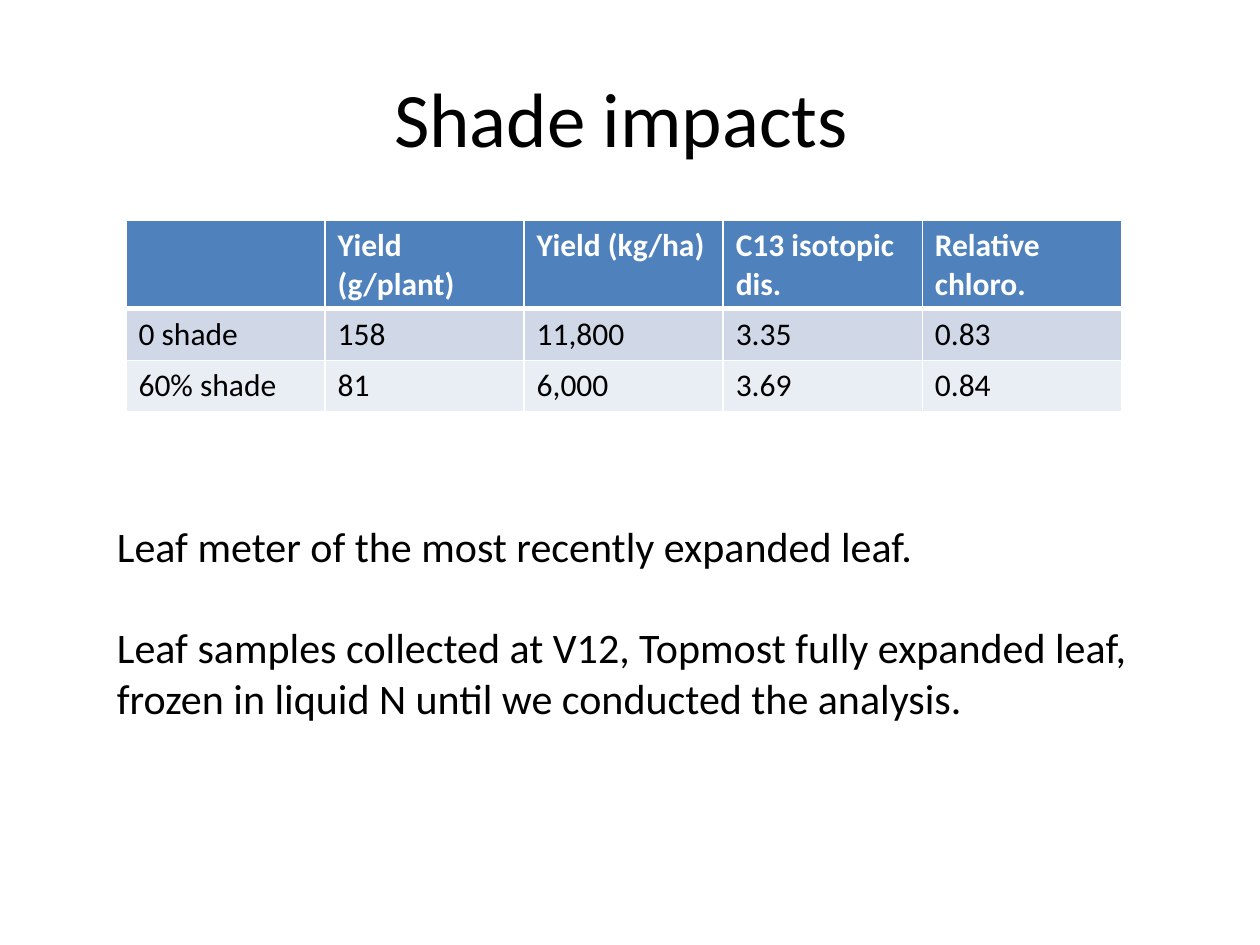
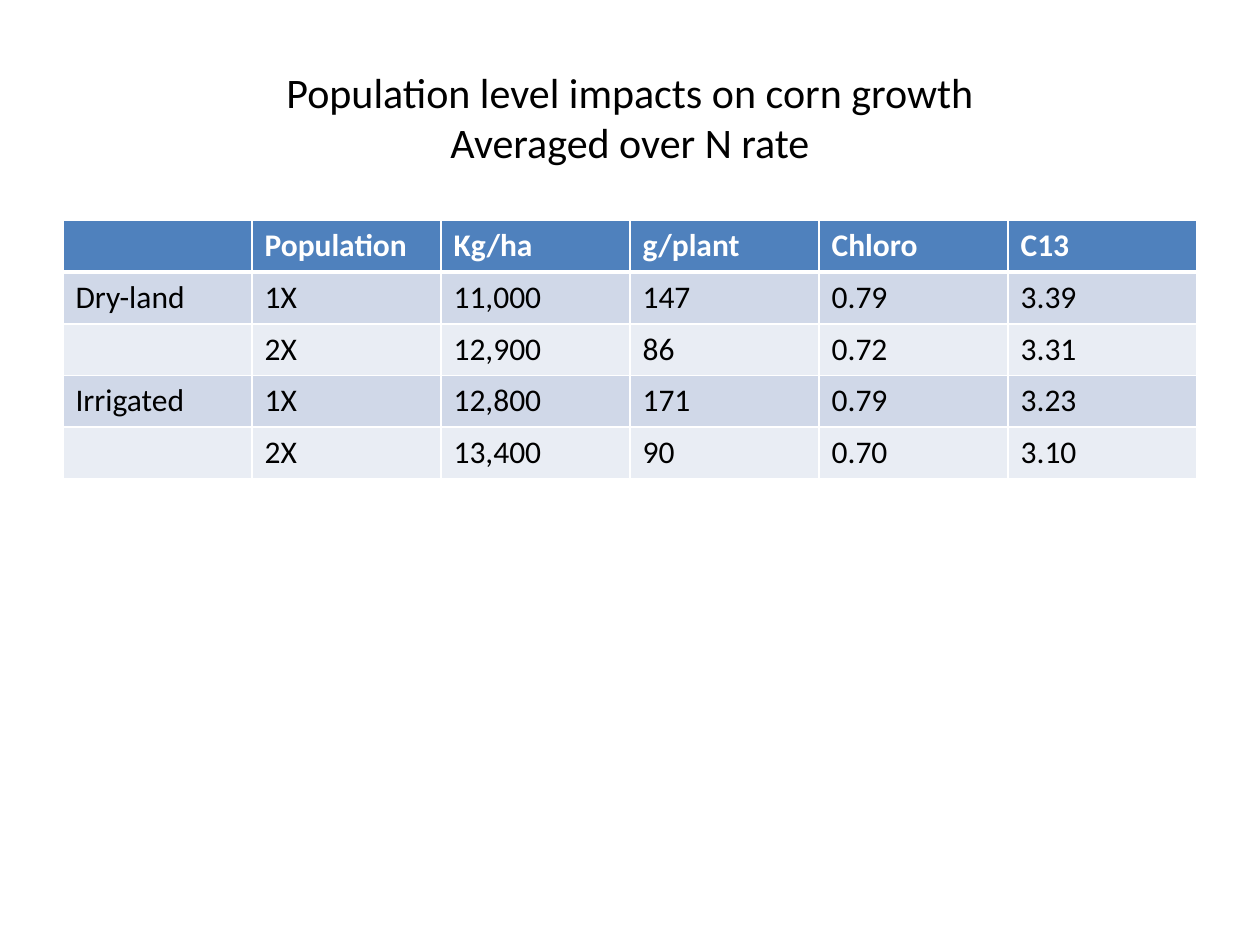
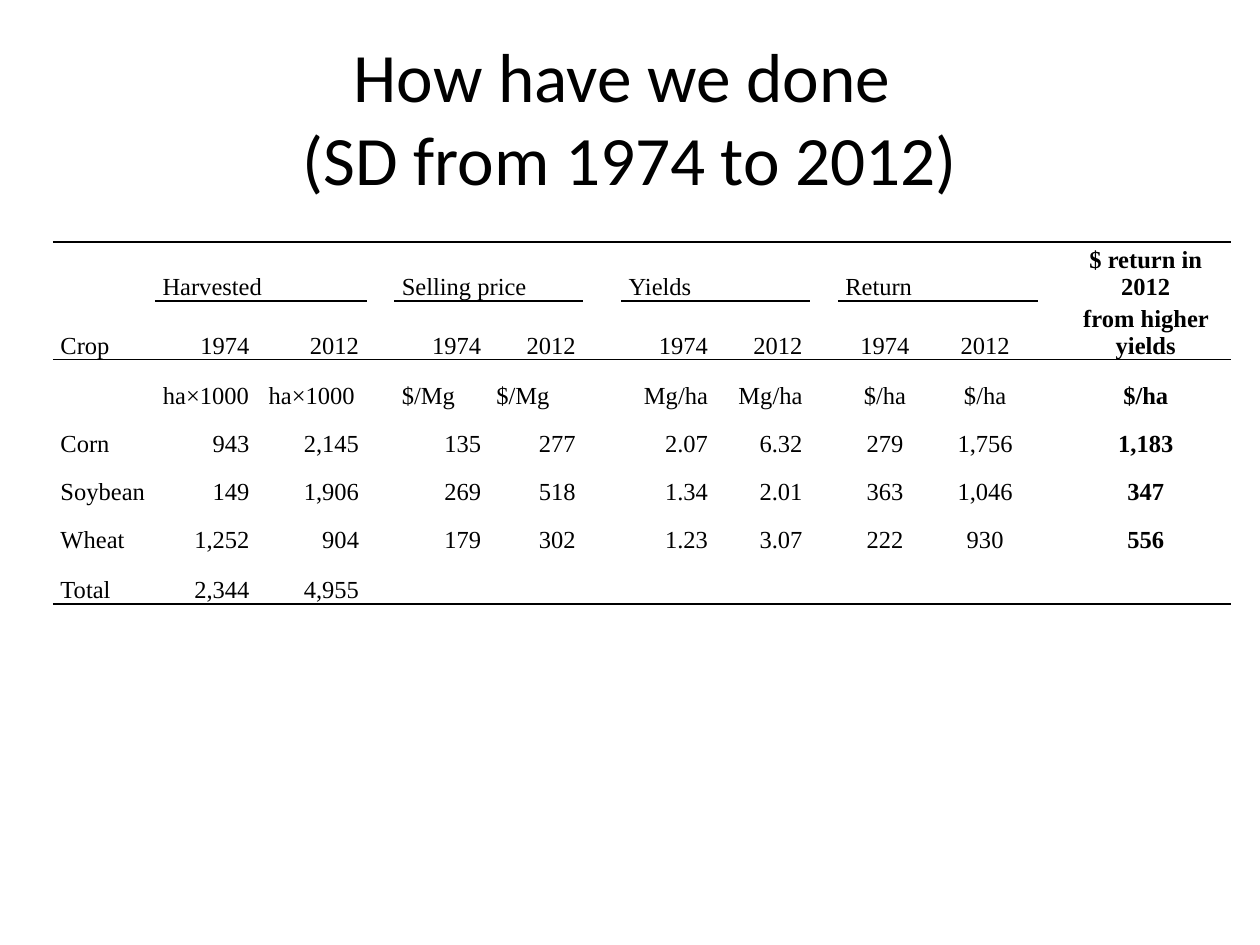
from lxml import etree
from pptx import Presentation
from pptx.dml.color import RGBColor
from pptx.enum.text import MSO_ANCHOR, PP_ALIGN
from pptx.oxml.ns import qn
from pptx.util import Inches, Pt

LEFT, CENTER, RIGHT = PP_ALIGN.LEFT, PP_ALIGN.CENTER, PP_ALIGN.RIGHT
MIDDLE, BOTTOM = MSO_ANCHOR.MIDDLE, MSO_ANCHOR.BOTTOM

COLORS = {
    "text": "000000",
    "white": "FFFFFF",
    "header": "4F81BD",
    "odd_row": "D0D8E8",
    "even_row": "E9EDF4",
}
SANS, SERIF = "Calibri", "Times New Roman"
NO_STYLE_NO_GRID = "{2D5ABB26-0587-4C30-8999-92F81FD0307C}"
SLIDE_W, SLIDE_H = 10, 7.5
MARGIN = 0.05 * SLIDE_W


def style_text(frame, size, face=SANS, color="text", bold=False, align=LEFT):
    for paragraph in frame.paragraphs:
        paragraph.alignment = align
        for run in paragraph.runs:
            run.font.size = Pt(size)
            run.font.name = face
            run.font.bold = bold
            run.font.color.rgb = RGBColor.from_string(COLORS[color])


def draw_borders(cell, color, **widths):
    """Draw the given sides (L, R, T, B) in points and clear the others; call before filling."""
    properties = cell._tc.get_or_add_tcPr()
    for side in "LRTB":
        width = widths.get(side, 0)
        line = etree.SubElement(properties, qn(f"a:ln{side}"), w=str(Pt(width)))
        if width:
            fill = etree.SubElement(line, qn("a:solidFill"))
            etree.SubElement(fill, qn("a:srgbClr"), val=COLORS[color])
        else:
            etree.SubElement(line, qn("a:noFill"))


prs = Presentation()
prs.slide_width, prs.slide_height = Inches(SLIDE_W), Inches(SLIDE_H)

shade_rows = [
    ["", "Yield (g/plant)", "Yield (kg/ha)", "C13 isotopic dis.", "Relative chloro."],
    ["0 shade", "158", "11,800", "3.35", "0.83"],
    ["60% shade", "81", "6,000", "3.69", "0.84"],
]
population_rows = [
    ["", "Population", "Kg/ha", "g/plant", "Chloro", "C13"],
    ["Dry-land", "1X", "11,000", "147", "0.79", "3.39"],
    ["", "2X", "12,900", "86", "0.72", "3.31"],
    ["Irrigated", "1X", "12,800", "171", "0.79", "3.23"],
    ["", "2X", "13,400", "90", "0.70", "3.10"],
]
history_rows = [
    ["", "Harvested", "", "", "Selling price", "", "", "Yields", "", "",
     "Return", "", "", "$ return in 2012"],
    ["Crop", "1974", "2012", "", "1974", "2012", "", "1974", "2012", "",
     "1974", "2012", "", "from higher yields"],
    ["", "ha×1000", "ha×1000", "", "$/Mg", "$/Mg", "", "Mg/ha", "Mg/ha", "",
     "$/ha", "$/ha", "", "$/ha"],
    ["Corn", "943", "2,145", "", "135", "277", "", "2.07", "6.32", "",
     "279", "1,756", "", "1,183"],
    ["Soybean", "149", "1,906", "", "269", "518", "", "1.34", "2.01", "",
     "363", "1,046", "", "347"],
    ["Wheat", "1,252", "904", "", "179", "302", "", "1.23", "3.07", "",
     "222", "930", "", "556"],
    ["Total", "2,344", "4,955"] + [""] * 11,
]
history_widths = [0.81, 0.81, 0.87, 0.22, 0.75, 0.75, 0.3,
                  0.75, 0.75, 0.22, 0.75, 0.84, 0.18, 1.35]
history_heights = [0.33, 0.4, 0.4, 0.38, 0.38, 0.38, 0.4]

# Title, title size, table rows, table left and top, column widths, row heights
pages = [
    ("Shade impacts ", 44, shade_rows, 2 * MARGIN, 1.75, [1.58] * 5, [0.41] * 3),
    ("Population level impacts on corn growth\nAveraged over N rate", 24,
     population_rows, MARGIN, 1.75, [1.5] * 6, [0.41] * 5),
    ("How have we done \n(SD from 1974 to 2012)", 39.6,
     history_rows, 0.42, 1.92, history_widths, history_heights),
]

# Titles and table contents
slides, tables = [], []
for title, title_size, rows, left, top, widths, heights in pages:
    slide = prs.slides.add_slide(prs.slide_layouts[6])
    heading = slide.shapes.add_textbox(
        Inches(MARGIN), Inches(0.04 * SLIDE_H),
        Inches(SLIDE_W - 2 * MARGIN), Inches(SLIDE_H / 6)).text_frame
    heading.word_wrap = True
    heading.vertical_anchor = MIDDLE
    heading.paragraphs[0].text = title
    style_text(heading, title_size, align=CENTER)

    table = slide.shapes.add_table(
        len(rows), len(widths), Inches(left), Inches(top),
        Inches(sum(widths)), Inches(sum(heights))).table
    table._tbl.tblPr.find(qn("a:tableStyleId")).text = NO_STYLE_NO_GRID
    table.horz_banding = False
    for column, width in zip(table.columns, widths):
        column.width = Inches(width)
    for row, height, values in zip(table.rows, heights, rows):
        row.height = Inches(height)
        for cell, value in zip(row.cells, values):
            cell.text_frame.text = value
    slides.append(slide)
    tables.append(table)

shade_slide = slides[0]
shade_table, population_table, history_table = tables

# Banded tables
for table in (shade_table, population_table):
    for r, row in enumerate(table.rows):
        is_header = r == 0
        band = "header" if is_header else "odd_row" if r % 2 else "even_row"
        for cell in row.cells:
            draw_borders(cell, "white", L=1, R=1, T=3 if r == 1 else 1,
                         B=3 if is_header else 1)
            cell.fill.solid()
            cell.fill.fore_color.rgb = RGBColor.from_string(COLORS[band])
            style_text(cell.text_frame, 18, bold=is_header,
                       color="white" if is_header else "text")

# Sampling notes under the shade table
notes = shade_slide.shapes.add_textbox(
    Inches(0.83), Inches(4.08), Inches(8.37), Inches(1.72)).text_frame
notes.word_wrap = True
notes.text = ("Leaf meter of the most recently expanded leaf.\n"
              "Leaf samples collected at V12, Topmost fully expanded leaf,\n"
              "frozen in liquid N until we conducted the analysis.")
style_text(notes, 24)
notes.paragraphs[1].space_before = Pt(29.3)

# Ruled crop history table
ALIGNMENTS = {"l": LEFT, "c": CENTER, "r": RIGHT}
body_alignment = "lrrlrrlrrlcclc"
row_alignment = {0: "lllllllllllllc", 2: "lccllllrrlcclc"}
group_columns = (1, 2, 4, 5, 7, 8, 10, 11)
last_row, last_column = len(history_rows) - 1, len(history_widths) - 1
for r, row in enumerate(history_table.rows):
    alignment = row_alignment.get(r, body_alignment)
    for c, cell in enumerate(row.cells):
        rules = {}
        if r in (0, 2) or (r == 1 and c in group_columns):
            rules["T"] = 1
        if r in (1, last_row) or (r == 0 and c in group_columns):
            rules["B"] = 1
        draw_borders(cell, "text", **rules)
        cell.fill.background()
        cell.vertical_anchor = BOTTOM
        cell.margin_left = cell.margin_right = Inches(0.06)
        cell.margin_top = cell.margin_bottom = 0
        style_text(cell.text_frame, 14, SERIF, bold=c == last_column,
                   align=ALIGNMENTS[alignment[c]])
for first in (1, 4):
    history_table.cell(0, first).merge(history_table.cell(0, first + 1))

prs.save("out.pptx")
